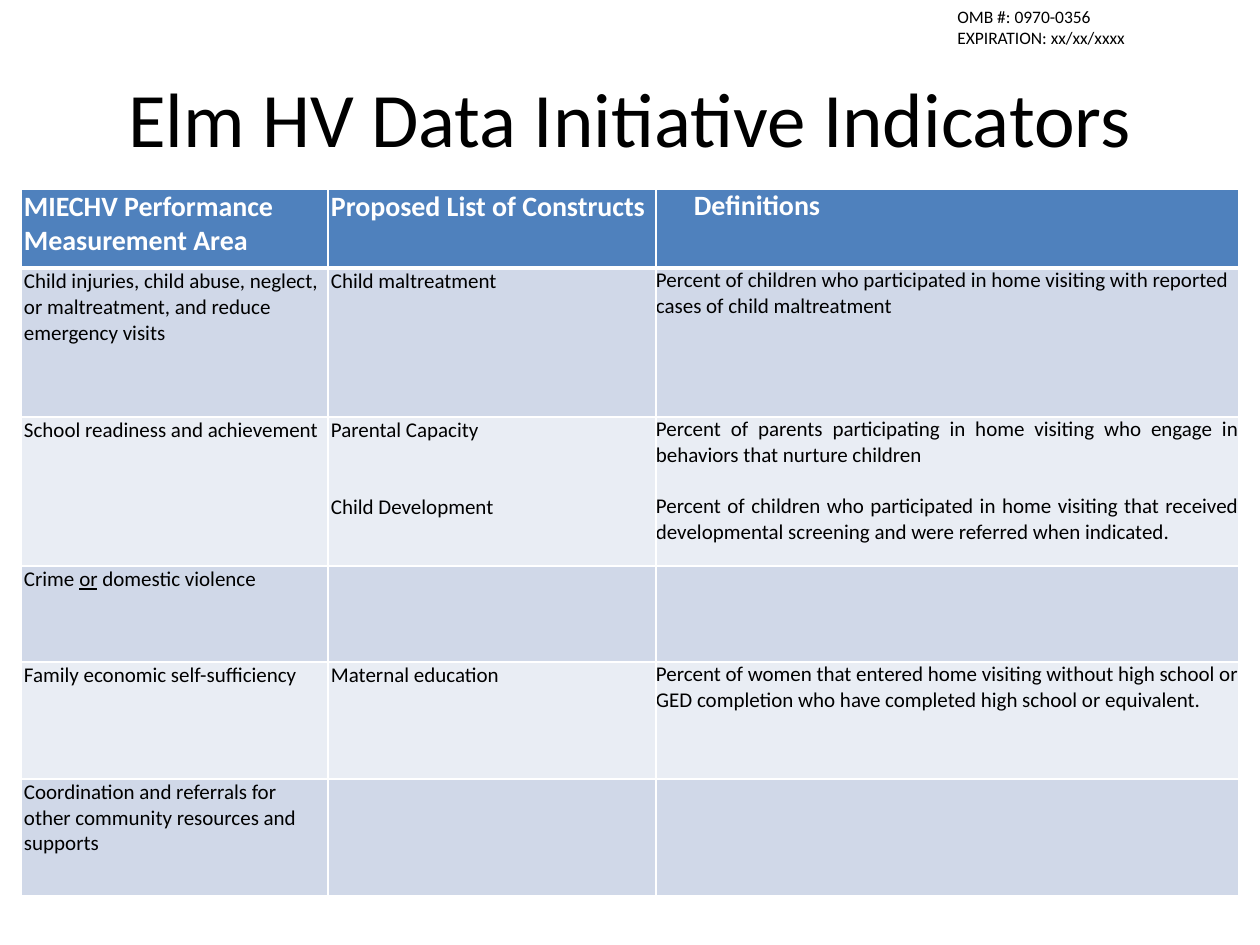
from lxml.etree import SubElement
from pptx import Presentation
from pptx.dml.color import RGBColor
from pptx.enum.text import MSO_ANCHOR, PP_ALIGN as Align
from pptx.oxml.ns import qn
from pptx.util import Emu, Pt

SCALE = 914400 / 126
THEME = {
    "font": "Calibri",
    "text": "000000", "header_text": "FFFFFF", "border": "FFFFFF",
    "header": "4F81BD", "bands": ("D0D8E8", "E9EDF4"),
    "title_size": 44, "header_size": 16, "body_size": 12, "note_size": 10,
}
LEFT, JUSTIFY = Align.LEFT, Align.JUSTIFY


def px(count):
    return Emu(round(count * SCALE))


def add_span(para, text, size, color, bold=False, underline=False):
    span = para.add_run()
    span.text = text
    span.font.name = THEME["font"]
    span.font.size = Pt(size)
    span.font.bold = bold
    span.font.underline = underline
    span.font.color.rgb = RGBColor.from_string(color)


deck = Presentation()
deck.slide_width, deck.slide_height = px(1260), px(945)
page = deck.slides.add_slide(deck.slide_layouts[6])

# Indicator table: each cell is a list of (text, alignment, space before in points)
column_widths = [307, 328, 583]
row_heights = [79, 149, 149, 96, 117, 117]
rows = [
    [[("MIECHV Performance Measurement Area", LEFT, 0)],
     [("Proposed List of Constructs", LEFT, 0)],
     [("Definitions", JUSTIFY, 0)]],
    [[("Child injuries, child abuse, neglect, or maltreatment, and reduce "
       "emergency visits", LEFT, 0)],
     [("Child maltreatment", LEFT, 0)],
     [("Percent of children who participated in home visiting with reported "
       "cases of child maltreatment", LEFT, 0)]],
    [[("School readiness and achievement", LEFT, 0)],
     [("Parental Capacity", JUSTIFY, 0), ("Child Development", LEFT, 29.3)],
     [("Percent of parents participating in home visiting who engage in "
       "behaviors that nurture children", JUSTIFY, 0),
      ("Percent of children who participated in home visiting that received "
       "developmental screening and were referred when indicated.", JUSTIFY, 14.6)]],
    [[("Crime |or| domestic violence", LEFT, 0)], [], []],
    [[("Family economic self-sufficiency", LEFT, 0)],
     [("Maternal education", LEFT, 0)],
     [("Percent of women that entered home visiting without high school or GED "
       "completion who have completed high school or equivalent.", LEFT, 0)]],
    [[("Coordination and referrals for other community resources and supports",
       LEFT, 0)], [], []],
]

frame = page.shapes.add_table(len(rows), len(column_widths), px(21), px(189),
                              px(sum(column_widths)), px(sum(row_heights)))
table = frame.table
table.first_row = table.horz_banding = False
for column, width in zip(table.columns, column_widths):
    column.width = px(width)
for row, height in zip(table.rows, row_heights):
    row.height = px(height)

for r, row in enumerate(rows):
    is_header = r == 0
    fill = THEME["header"] if is_header else THEME["bands"][(r - 1) % 2]
    size = THEME["header_size" if is_header else "body_size"]
    color = THEME["header_text" if is_header else "text"]
    for c, paragraphs in enumerate(row):
        cell = table.cell(r, c)
        is_definition = c == 2
        cell.margin_left = cell.margin_right = px(0 if is_definition else 3)
        cell.margin_top = cell.margin_bottom = px(0 if is_definition else 1)

        props = cell._tc.get_or_add_tcPr()
        for side in ("lnL", "lnR", "lnT", "lnB"):
            thick = (r == 0 and side == "lnB") or (r == 1 and side == "lnT")
            line = SubElement(props, qn(f"a:{side}"), w=str(Pt(3 if thick else 1)))
            solid = SubElement(line, qn("a:solidFill"))
            SubElement(solid, qn("a:srgbClr"), val=THEME["border"])
        cell.fill.solid()
        cell.fill.fore_color.rgb = RGBColor.from_string(fill)

        for i, (text, align, space) in enumerate(paragraphs):
            para = cell.text_frame.add_paragraph() if i else cell.text_frame.paragraphs[0]
            para.alignment = align
            para.space_before = Pt(space)
            if is_header and is_definition:
                para._p.get_or_add_pPr().set("indent", str(px(38)))
            # Bars enclose the underlined words
            for part, words in enumerate(text.split("|")):
                add_span(para, words, size, color, is_header, part % 2 == 1)

# Title and form number: left, top, width, height, anchor, alignment, size, lines
text_boxes = [
    (63, 38, 1134, 157, MSO_ANCHOR.MIDDLE, Align.CENTER, THEME["title_size"],
     ["Elm HV Data Initiative Indicators"]),
    (945, 0, 315, 93, MSO_ANCHOR.TOP, LEFT, THEME["note_size"],
     ["OMB #: 0970-0356", "EXPIRATION: xx/xx/xxxx"]),
]
for left, top, width, height, anchor, align, size, lines in text_boxes:
    box = page.shapes.add_textbox(px(left), px(top), px(width), px(height))
    box.text_frame.word_wrap = True
    box.text_frame.vertical_anchor = anchor
    for i, text in enumerate(lines):
        para = box.text_frame.add_paragraph() if i else box.text_frame.paragraphs[0]
        para.alignment = align
        add_span(para, text, size, THEME["text"])

deck.save("out.pptx")
